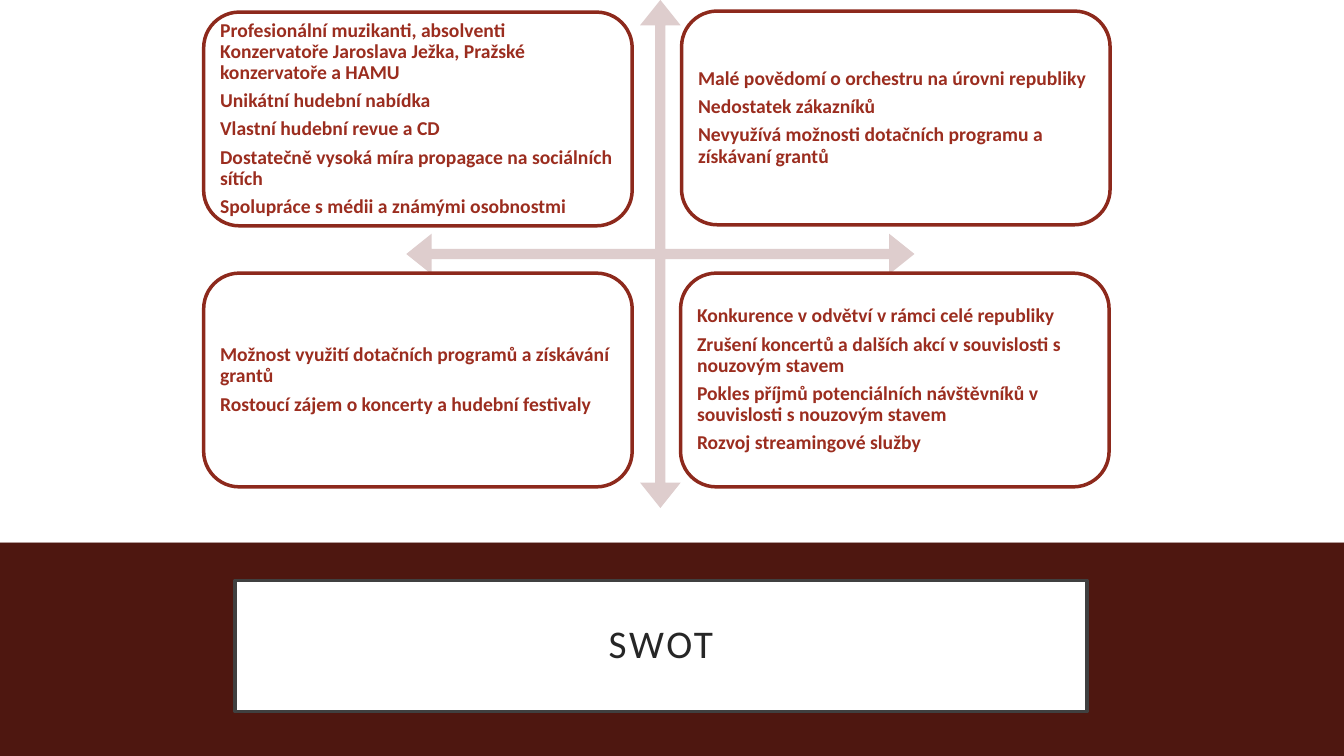
from pptx import Presentation
from pptx.dml.color import RGBColor
from pptx.enum.shapes import MSO_SHAPE
from pptx.enum.text import MSO_ANCHOR, MSO_AUTO_SIZE, PP_ALIGN
from pptx.util import Inches, Pt

RECTANGLE = MSO_SHAPE.RECTANGLE
ROUNDED_RECTANGLE = MSO_SHAPE.ROUNDED_RECTANGLE
QUAD_ARROW = MSO_SHAPE.QUAD_ARROW
MIDDLE = MSO_ANCHOR.MIDDLE
NO_AUTOFIT = MSO_AUTO_SIZE.NONE
LEFT = PP_ALIGN.LEFT
CENTER = PP_ALIGN.CENTER

QUADRANTS = [
    (2.02, 0.12, [
        "Profesionální muzikanti, absolventi Konzervatoře Jaroslava Ježka, Pražské konzervatoře a HAMU",
        "Unikátní hudební nabídka",
        "Vlastní hudební revue a CD",
        "Dostatečně vysoká míra propagace na sociálních sítích",
        "Spolupráce s médii a známými osobnostmi",
    ]),
    (6.76, 0.11, [
        "Malé povědomí o orchestru na úrovni republiky",
        "Nedostatek zákazníků",
        "Nevyužívá možnosti dotačních programu a získávaní grantů",
    ]),
    (2.02, 2.71, [
        "Možnost využití dotačních programů a získávání grantů",
        "Rostoucí zájem o koncerty a hudební festivaly",
    ]),
    (6.75, 2.71, [
        "Konkurence v odvětví v rámci celé republiky",
        "Zrušení koncertů a dalších akcí v souvislosti s nouzovým stavem",
        "Pokles příjmů potenciálních návštěvníků v souvislosti s nouzovým stavem",
        "Rozvoj streamingové služby",
    ]),
]


def color(value):
    return RGBColor.from_string(value)


def add_filled_shape(kind, left, top, width, height, fill, line=None):
    shape = slide.shapes.add_shape(kind, Inches(left), Inches(top), Inches(width), Inches(height))
    shape.shadow.inherit = False
    shape.fill.solid()
    shape.fill.fore_color.rgb = color(fill)
    if line:
        shape.line.color.rgb = color(line)
        shape.line.width = Pt(2.5)
    else:
        shape.line.fill.background()
    return shape


presentation = Presentation()
presentation.slide_width = Inches(13.33)
presentation.slide_height = Inches(7.5)
slide = presentation.slides.add_slide(presentation.slide_layouts[5])

add_filled_shape(RECTANGLE, 0, 5.38, 13.33, 2.12, "4E1710")
add_filled_shape(RECTANGLE, 0, 0, 13.33, 5.38, "FFFFFF")

title = slide.shapes.title
title.element.getparent().append(title.element)
title.left, title.top = Inches(2.33), Inches(5.76)
title.width, title.height = Inches(8.45), Inches(1.3)
title.fill.solid()
title.fill.fore_color.rgb = color("FFFFFF")
title.line.color.rgb = color("404040")
title.line.width = Pt(2.5)
frame = title.text_frame
frame.text = "SWOT"
frame.word_wrap = True
frame.auto_size = NO_AUTOFIT
frame.vertical_anchor = MIDDLE
frame.margin_left = frame.margin_right = frame.margin_top = frame.margin_bottom = Inches(0.2)
paragraph = frame.paragraphs[0]
paragraph.alignment = CENTER
paragraph.line_spacing = 0.9
run = paragraph.runs[0]
run.font.name = "Calibri"
run.font.size = Pt(28)
run.font.color.rgb = color("262626")
run.font._element.set("spc", "200")

arrows = add_filled_shape(QUAD_ARROW, 4.03, 0, 5.04, 5.04, "DECDCD")
for index, adjustment in enumerate([0.02, 0.04, 0.05]):
    arrows.adjustments[index] = adjustment

for left, top, points in QUADRANTS:
    quadrant = add_filled_shape(ROUNDED_RECTANGLE, left, top, 4.25, 2.12, "FFFFFF", "8D291C")
    frame = quadrant.text_frame
    frame.word_wrap = True
    frame.vertical_anchor = MIDDLE
    frame.margin_left = frame.margin_right = frame.margin_top = frame.margin_bottom = Inches(0.06)
    frame.text = "\n".join(points)
    for paragraph in frame.paragraphs:
        paragraph.alignment = LEFT
        paragraph.line_spacing = 0.9
        paragraph.space_after = Pt(5)
        paragraph.font.name = "Calibri"
        paragraph.font.size = Pt(14)
        paragraph.font.bold = True
        paragraph.font.color.rgb = color("9B2D1F")

presentation.save("out.pptx")
